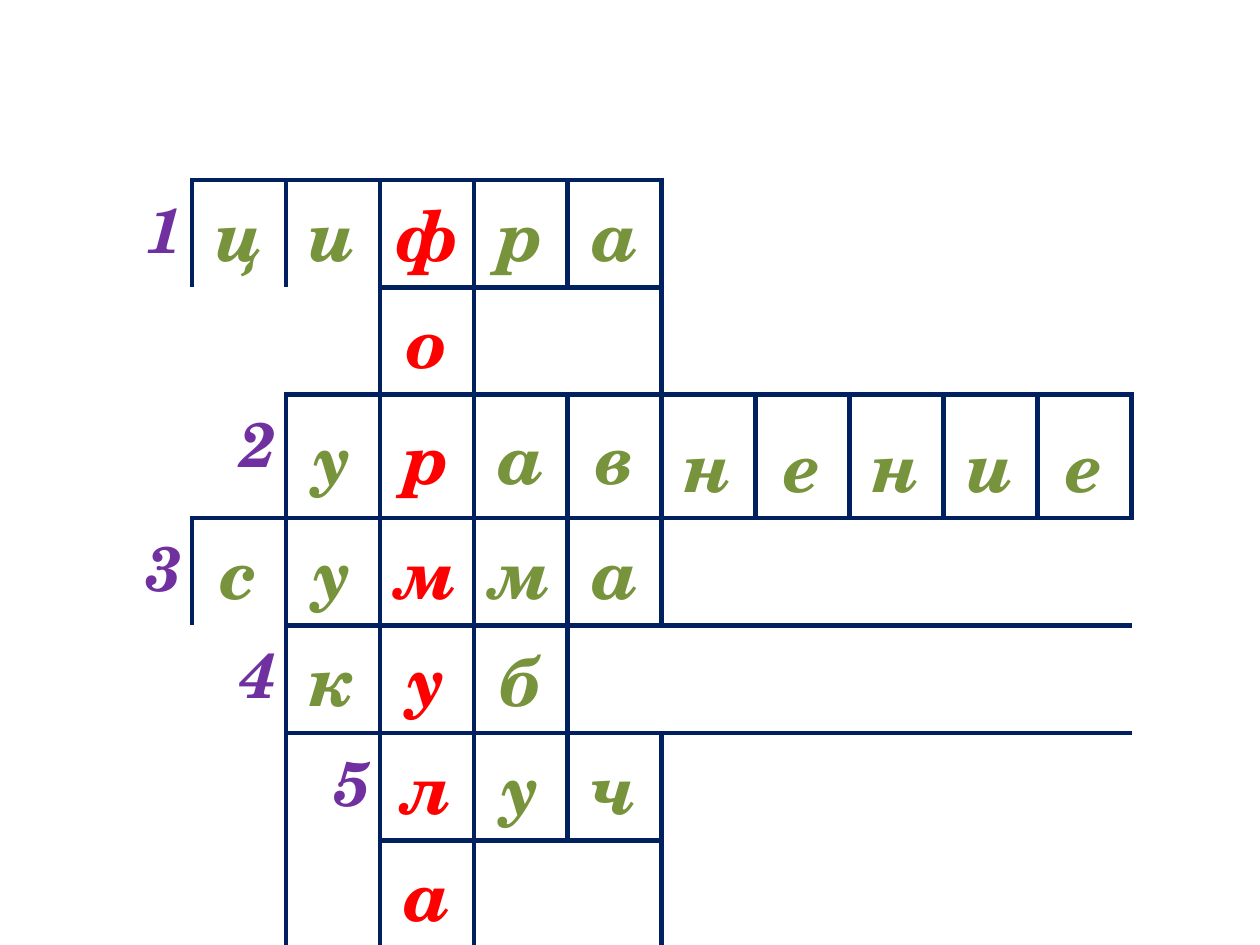
from dataclasses import dataclass
from itertools import product

from lxml.etree import SubElement
from pptx import Presentation
from pptx.dml.color import RGBColor
from pptx.enum.text import MSO_ANCHOR as Anchor, PP_ALIGN as Align
from pptx.oxml.ns import qn
from pptx.table import Table, _Cell as TableCell
from pptx.util import Pt

PX = 914400 // 126
FONT = "TeX Gyre Schola"
COLORS = {"line": "002060", "number": "7030A0", "letter": "77933C", "key": "FF0000"}
COLUMN_COUNT = 11
COLUMN_WIDTH = 94
KEY_COLUMN = 3
LONG_WORD_ROW = 2
LOOSE_COLUMN = 6
ROW_HEIGHTS = [103, 93, 93, 101, 93, 102, 108]
ALL_SIDES = "LRTB"
OPEN_BELOW = {(0, 1), (0, 2), (3, 1)}


@dataclass(frozen=True)
class Word:
    row: int
    column: int
    text: str


@dataclass(frozen=True)
class Region:
    row: int
    column: int
    rows: int
    columns: int
    sides: str
    number: str = ""


WORDS = [
    Word(0, 1, "цифра"),
    Word(1, 3, "о"),
    Word(2, 2, "уравнение"),
    Word(3, 1, "сумма"),
    Word(4, 2, "куб"),
    Word(5, 3, "луч"),
    Word(6, 3, "а"),
]

REGIONS = [
    Region(0, 0, 1, 1, "R", "1"),
    Region(0, 6, 2, 4, "LB"),
    Region(0, 10, 2, 1, "B"),
    Region(1, 0, 1, 3, "R"),
    Region(1, 4, 1, 2, "LRTB"),
    Region(2, 0, 1, 2, "R", "2"),
    Region(3, 0, 1, 1, "R", "3"),
    Region(3, 6, 1, 5, "LTB"),
    Region(4, 0, 2, 2, "R", "4"),
    Region(4, 5, 1, 6, "LTB"),
    Region(5, 2, 2, 1, "LTR", "5"),
    Region(5, 6, 2, 5, "LT"),
    Region(6, 0, 1, 2, "R"),
    Region(6, 4, 1, 2, "LTR"),
]


def set_borders(cell: TableCell, sides: str) -> None:
    cell.fill.background()
    properties = cell._tc.get_or_add_tcPr()
    for index, side in enumerate(ALL_SIDES):
        line = SubElement(properties, qn(f"a:ln{side}"), w=str(Pt(3)))
        properties.insert(index, line)
        if side in sides:
            fill = SubElement(line, qn("a:solidFill"))
            SubElement(fill, qn("a:srgbClr"), val=COLORS["line"])
        else:
            SubElement(line, qn("a:noFill"))


def write(cell: TableCell, text: str, color: str, size: int, align: Align) -> None:
    paragraph = cell.text_frame.paragraphs[0]
    paragraph.alignment = align
    run = paragraph.add_run()
    run.text = text
    font = run.font
    font.name = FONT
    font.size = Pt(size)
    font.bold = font.italic = True
    font.color.rgb = RGBColor.from_string(COLORS[color])


def set_margins(cell: TableCell) -> None:
    cell.margin_left = cell.margin_right = 9 * PX
    cell.margin_top = cell.margin_bottom = 0


def draw_word(table: Table, word: Word) -> None:
    for column, letter in enumerate(word.text, word.column):
        cell = table.cell(word.row, column)
        set_margins(cell)
        cell.vertical_anchor = Anchor.MIDDLE
        color = "key" if column == KEY_COLUMN else "letter"
        write(cell, letter, color, 40, Align.CENTER)
        if word.row == LONG_WORD_ROW and column >= LOOSE_COLUMN:
            cell.text_frame.paragraphs[0].line_spacing = 1.15
        set_borders(cell, "LRT" if (word.row, column) in OPEN_BELOW else ALL_SIDES)


def draw_region(table: Table, region: Region) -> None:
    last_row = region.row + region.rows - 1
    last_column = region.column + region.columns - 1
    origin = table.cell(region.row, region.column)
    if region.rows * region.columns > 1:
        origin.merge(table.cell(last_row, last_column))
    for row, column in product(
        range(region.row, last_row + 1), range(region.column, last_column + 1)
    ):
        outer = {
            "L": column == region.column,
            "R": column == last_column,
            "T": row == region.row,
            "B": row == last_row,
        }
        cell = table.cell(row, column)
        set_margins(cell)
        set_borders(cell, "".join(side for side in region.sides if outer[side]))
    if region.number:
        write(origin, region.number, "number", 36, Align.RIGHT)


def main() -> None:
    presentation = Presentation()
    presentation.slide_width = 1260 * PX
    presentation.slide_height = 945 * PX
    slide = presentation.slides.add_slide(presentation.slide_layouts[6])
    table = slide.shapes.add_table(
        len(ROW_HEIGHTS), COLUMN_COUNT, 98 * PX, 180 * PX,
        COLUMN_COUNT * COLUMN_WIDTH * PX, sum(ROW_HEIGHTS) * PX,
    ).table
    table.first_row = table.horz_banding = False
    for column in table.columns:
        column.width = COLUMN_WIDTH * PX
    for row, height in zip(table.rows, ROW_HEIGHTS):
        row.height = height * PX
    for word in WORDS:
        draw_word(table, word)
    for region in REGIONS:
        draw_region(table, region)
    presentation.save("out.pptx")


if __name__ == "__main__":
    main()
